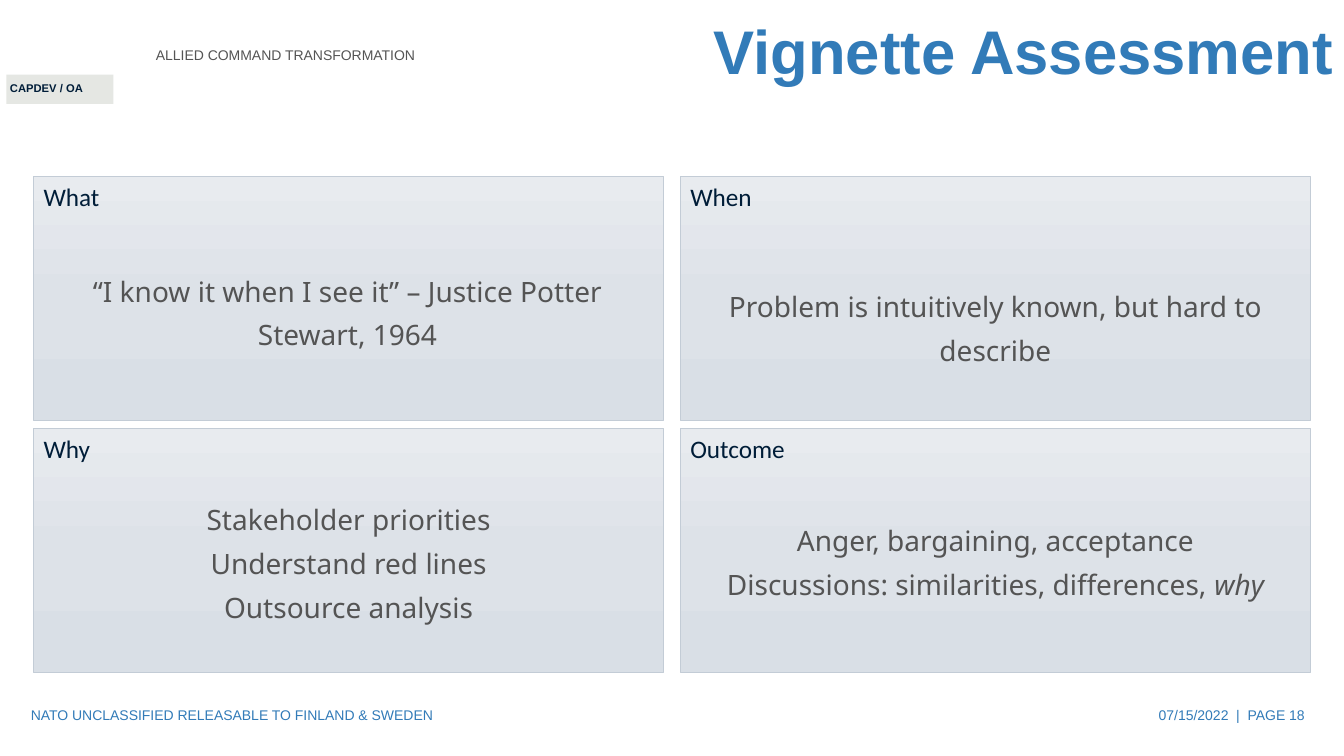
from copy import deepcopy

from pptx import Presentation
from pptx.dml.color import RGBColor
from pptx.enum.shapes import MSO_SHAPE
from pptx.enum.text import MSO_ANCHOR as ANCHOR, MSO_AUTO_SIZE as AUTO, PP_ALIGN as ALIGN
from pptx.oxml.ns import qn
from pptx.util import Pt

PX = 9525
BLUE = RGBColor(0x32, 0x7B, 0xB8)
NAVY = RGBColor(0x00, 0x1D, 0x38)
GRAY = RGBColor(0x54, 0x54, 0x54)
TAG_FILL = RGBColor(0xE5, 0xE7, 0xE3)
PANEL_LINE = RGBColor(0xC3, 0xCC, 0xD6)
PANEL_STOPS = [
    (0, RGBColor(0xE8, 0xEB, 0xEF)),
    (0.5, RGBColor(0xDD, 0xE2, 0xE8)),
    (1, RGBColor(0xD9, 0xDF, 0xE6)),
]


def box(*lengths):
    return [n * PX for n in lengths]


def write(tf, lines, size, color, font="Arial", align=ALIGN.LEFT,
          anchor=ANCHOR.MIDDLE, spacing=None, bold=False):
    tf.word_wrap = True
    tf.vertical_anchor = anchor
    for i, line in enumerate(lines):
        p = tf.add_paragraph() if i else tf.paragraphs[0]
        p.alignment = align
        p.line_spacing = spacing
        for text, italic in line:
            r = p.add_run()
            r.text = text
            r.font.name = font
            r.font.size = Pt(size)
            r.font.bold = bold
            r.font.italic = italic
            r.font.color.rgb = color


prs = Presentation()
prs.slide_width, prs.slide_height = box(1280, 720)
s = prs.slides.add_slide(prs.slide_layouts[5])

title = s.shapes.title
title.left, title.top, title.width, title.height = box(176, 0, 1104, 104)
write(title.text_frame, [[("Vignette Assessment", False)]], 44, BLUE,
      align=ALIGN.RIGHT, spacing=0.9, bold=True)

tag = s.shapes.add_shape(MSO_SHAPE.RECTANGLE, *box(6, 71, 102, 28))
tag.shadow.inherit = False
tag.fill.solid()
tag.fill.fore_color.rgb = TAG_FILL
tag.line.fill.background()

tag_label = s.shapes.add_textbox(*box(0, 73, 89, 23))
write(tag_label.text_frame, [[("CAPDEV / OA", False)]], 8, NAVY,
      anchor=ANCHOR.TOP, bold=True)
tag_label.text_frame.word_wrap = False
tag_label.text_frame.auto_size = AUTO.SHAPE_TO_FIT_TEXT

small_texts = [
    ("ALLIED COMMAND TRANSFORMATION", (139, 24, 567, 57), GRAY, ALIGN.LEFT),
    ("07/15/2022  |  PAGE 18", (964, 662, 288, 38), BLUE, ALIGN.RIGHT),
    ("NATO UNCLASSIFIED RELEASABLE TO FINLAND & SWEDEN", (20, 662, 432, 38), BLUE, ALIGN.LEFT),
]
for text, place, color, align in small_texts:
    tb = s.shapes.add_textbox(*box(*place))
    write(tb.text_frame, [[(text, False)]], 10, color, align=align)

panels = [
    ("What", (54, 248, 554, 90),
     [[("“I know it when I see it” – Justice Potter Stewart, 1964", False)]]),
    ("When", (672, 261, 552, 94),
     [[("Problem is intuitively known, but hard to describe", False)]]),
    ("Why", (56, 464, 552, 135),
     [[("Stakeholder priorities", False)],
      [("Understand red lines", False)],
      [("Outsource analysis", False)]]),
    ("Outcome", (672, 484, 552, 94),
     [[("Anger, bargaining, acceptance", False)],
      [("Discussions: similarities, differences, ", False), ("why", True)]]),
]
for i, (heading, place, lines) in enumerate(panels):
    row, col = divmod(i, 2)
    sp = s.shapes.add_shape(MSO_SHAPE.RECTANGLE,
                            *box(32 + 616 * col, 168 + 240 * row, 600, 232))
    sp.shadow.inherit = False
    sp.fill.gradient()
    sp.fill.gradient_angle = 270
    stop_list = sp.element.spPr.find(".//" + qn("a:gsLst"))
    stop_list.append(deepcopy(stop_list[0]))
    for stop, (position, color) in zip(sp.fill.gradient_stops, PANEL_STOPS):
        stop.position = position
        stop.color.rgb = color
    sp.line.color.rgb = PANEL_LINE
    sp.line.width = Pt(0.5)
    write(sp.text_frame, [[(heading, False)]], 18, NAVY, "Calibri", anchor=ANCHOR.TOP)

    body = s.shapes.add_textbox(*box(*place))
    write(body.text_frame, lines, 20, GRAY, "Noto Sans", ALIGN.CENTER, spacing=1.3)
    body.text_frame.auto_size = AUTO.SHAPE_TO_FIT_TEXT

prs.save("out.pptx")
